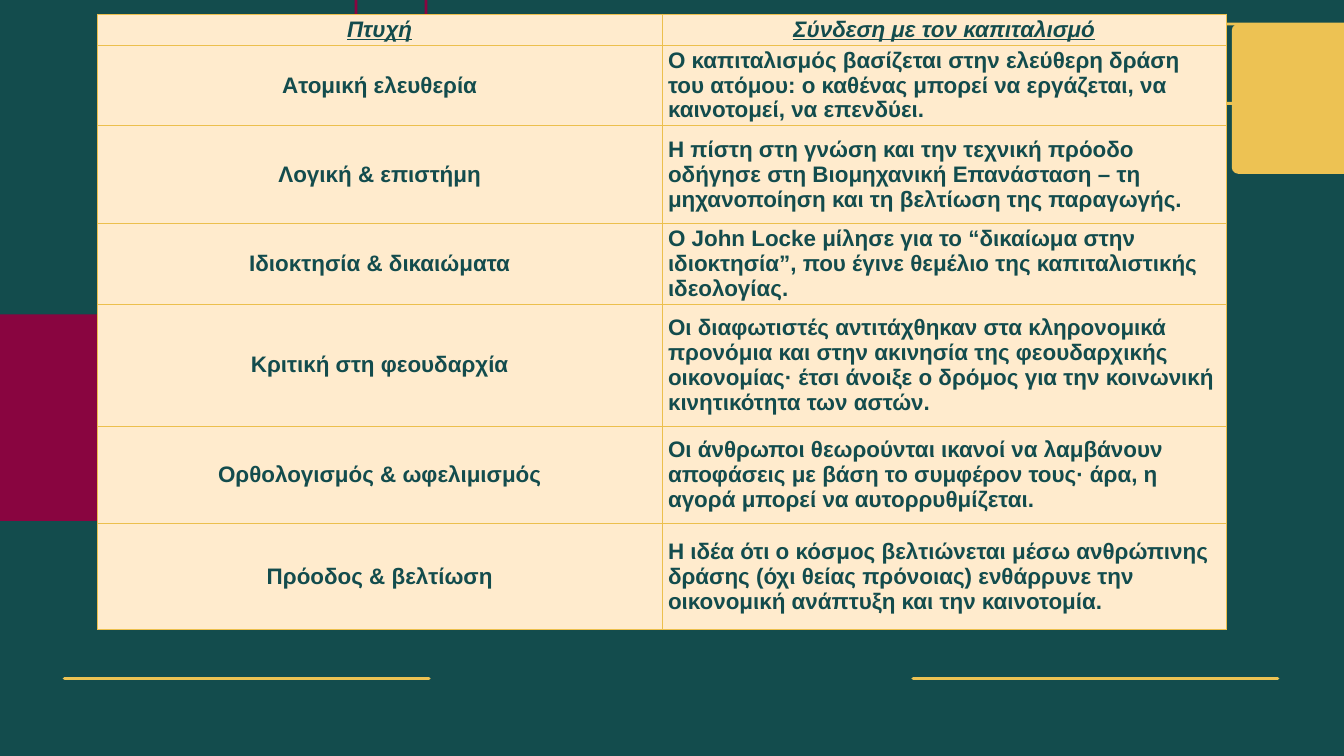
from dataclasses import dataclass
from typing import Optional

from lxml import etree
from pptx import Presentation
from pptx.dml.color import RGBColor
from pptx.enum.shapes import MSO_CONNECTOR, MSO_SHAPE
from pptx.enum.text import MSO_ANCHOR, PP_ALIGN
from pptx.oxml.ns import qn
from pptx.util import Cm, Pt

ROUND = MSO_SHAPE.ROUNDED_RECTANGLE
LINE = MSO_CONNECTOR.STRAIGHT
MIDDLE = MSO_ANCHOR.MIDDLE
CENTER, LEFT = PP_ALIGN.CENTER, PP_ALIGN.LEFT


@dataclass(frozen=True)
class Theme:
    back: str = "134C4D"
    ink: str = "134C4D"
    gold: str = "EDC253"
    wine: str = "890540"
    cream: str = "FFEBCD"
    grid: str = "ECBF4D"
    font: str = "Arial"
    size: float = 24
    rule: float = 4
    frame: float = 3
    border: float = 0.75


@dataclass(frozen=True)
class Panel:
    """Rounded box in cm; filled, or outlined when fill is None."""
    left: float
    top: float
    width: float
    height: float
    radius: float
    fill: Optional[str] = None
    line: Optional[str] = None


@dataclass(frozen=True)
class Row:
    height: float
    aspect: str
    link: str


THEME = Theme()

PANELS = [
    Panel(-3.81, 11.89, 15.52, 7.8, 0.25, fill=THEME.wine),
    Panel(46.56, 0.91, 6.02, 5.66, 0.24, fill=THEME.gold),
    Panel(42.29, 0.91, 14.55, 3, 0.1, line=THEME.gold),
    Panel(13.46, -0.69, 2.64, 4.6, 0.5, line=THEME.wine),
]

RULES = [34.52, 2.44]
RULE_TOP, RULE_WIDTH = 25.65, 13.77

ROWS = [
    Row(1.14, "Πτυχή", "Σύνδεση με τον καπιταλισμό"),
    Row(3.05, "Ατομική ελευθερία",
        "Ο καπιταλισμός βασίζεται στην ελεύθερη δράση του ατόμου: ο καθένας "
        "μπορεί να εργάζεται, να καινοτομεί, να επενδύει."),
    Row(3.7, "Λογική & επιστήμη",
        "Η πίστη στη γνώση και την τεχνική πρόοδο οδήγησε στη Βιομηχανική "
        "Επανάσταση – τη μηχανοποίηση και τη βελτίωση της παραγωγής."),
    Row(3.05, "Ιδιοκτησία & δικαιώματα",
        "Ο John Locke μίλησε για το “δικαίωμα στην ιδιοκτησία”, που έγινε "
        "θεμέλιο της καπιταλιστικής ιδεολογίας."),
    Row(4.6, "Κριτική στη φεουδαρχία",
        "Οι διαφωτιστές αντιτάχθηκαν στα κληρονομικά προνόμια και στην ακινησία "
        "της φεουδαρχικής οικονομίας· έτσι άνοιξε ο δρόμος για την κοινωνική "
        "κινητικότητα των αστών."),
    Row(3.7, "Ορθολογισμός & ωφελιμισμός",
        "Οι άνθρωποι θεωρούνται ικανοί να λαμβάνουν αποφάσεις με βάση το "
        "συμφέρον τους· άρα, η αγορά μπορεί να αυτορρυθμίζεται."),
    Row(4, "Πρόοδος & βελτίωση",
        "Η ιδέα ότι ο κόσμος βελτιώνεται μέσω ανθρώπινης δράσης (όχι θείας "
        "πρόνοιας) ενθάρρυνε την οικονομική ανάπτυξη και την καινοτομία."),
]
TABLE_LEFT, TABLE_TOP, COL_WIDTH = 3.68, 0.53, 21.34


def rgb(code: str) -> RGBColor:
    return RGBColor.from_string(code)


def draw_rule(slide, left: float) -> None:
    rule = slide.shapes.add_connector(
        LINE, Cm(left), Cm(RULE_TOP), Cm(left + RULE_WIDTH), Cm(RULE_TOP))
    rule.line.color.rgb = rgb(THEME.gold)
    rule.line.width = Pt(THEME.rule)
    props = rule._element.spPr
    props.find(qn("a:ln")).set("cap", "rnd")
    etree.SubElement(props, qn("a:effectLst"))


def draw_panel(slide, panel: Panel) -> None:
    box = slide.shapes.add_shape(
        ROUND, Cm(panel.left), Cm(panel.top), Cm(panel.width), Cm(panel.height))
    box.adjustments[0] = panel.radius / min(panel.width, panel.height)
    box.shadow.inherit = False
    if panel.fill:
        box.fill.solid()
        box.fill.fore_color.rgb = rgb(panel.fill)
    else:
        box.fill.background()
    if panel.line:
        box.line.color.rgb = rgb(panel.line)
        box.line.width = Pt(THEME.frame)
    else:
        box.line.fill.background()


def add_border(cell) -> None:
    props = cell._tc.get_or_add_tcPr()
    for side in ("lnL", "lnR", "lnT", "lnB"):
        edge = etree.SubElement(props, qn(f"a:{side}"), w=str(Pt(THEME.border)))
        fill = etree.SubElement(edge, qn("a:solidFill"))
        etree.SubElement(fill, qn("a:srgbClr"), val=THEME.grid)


def fill_cell(cell, text: str, align: PP_ALIGN, head: bool) -> None:
    add_border(cell)
    cell.fill.solid()
    cell.fill.fore_color.rgb = rgb(THEME.cream)
    cell.vertical_anchor = MIDDLE
    cell.margin_left = cell.margin_right = Cm(0.23)
    cell.margin_top = cell.margin_bottom = Cm(0.11)
    cell.text_frame.text = text
    para = cell.text_frame.paragraphs[0]
    para.alignment = align
    font = para.runs[0].font
    font.name, font.size = THEME.font, Pt(THEME.size)
    font.color.rgb = rgb(THEME.ink)
    font.bold = True
    font.italic = font.underline = head


def draw_table(slide, rows: list[Row]) -> None:
    height = sum(row.height for row in rows)
    table = slide.shapes.add_table(
        len(rows), 2, Cm(TABLE_LEFT), Cm(TABLE_TOP),
        Cm(2 * COL_WIDTH), Cm(height)).table
    for col in table.columns:
        col.width = Cm(COL_WIDTH)
    for num, row in enumerate(rows):
        head = num == 0
        table.rows[num].height = Cm(row.height)
        fill_cell(table.cell(num, 0), row.aspect, CENTER, head)
        fill_cell(table.cell(num, 1), row.link, CENTER if head else LEFT, head)


def main() -> None:
    deck = Presentation()
    deck.slide_width, deck.slide_height = Cm(50.8), Cm(28.58)
    slide = deck.slides.add_slide(deck.slide_layouts[6])
    slide.background.fill.solid()
    slide.background.fill.fore_color.rgb = rgb(THEME.back)
    for left in RULES:
        draw_rule(slide, left)
    for panel in PANELS:
        draw_panel(slide, panel)
    draw_table(slide, ROWS)
    deck.save("out.pptx")


if __name__ == "__main__":
    main()
